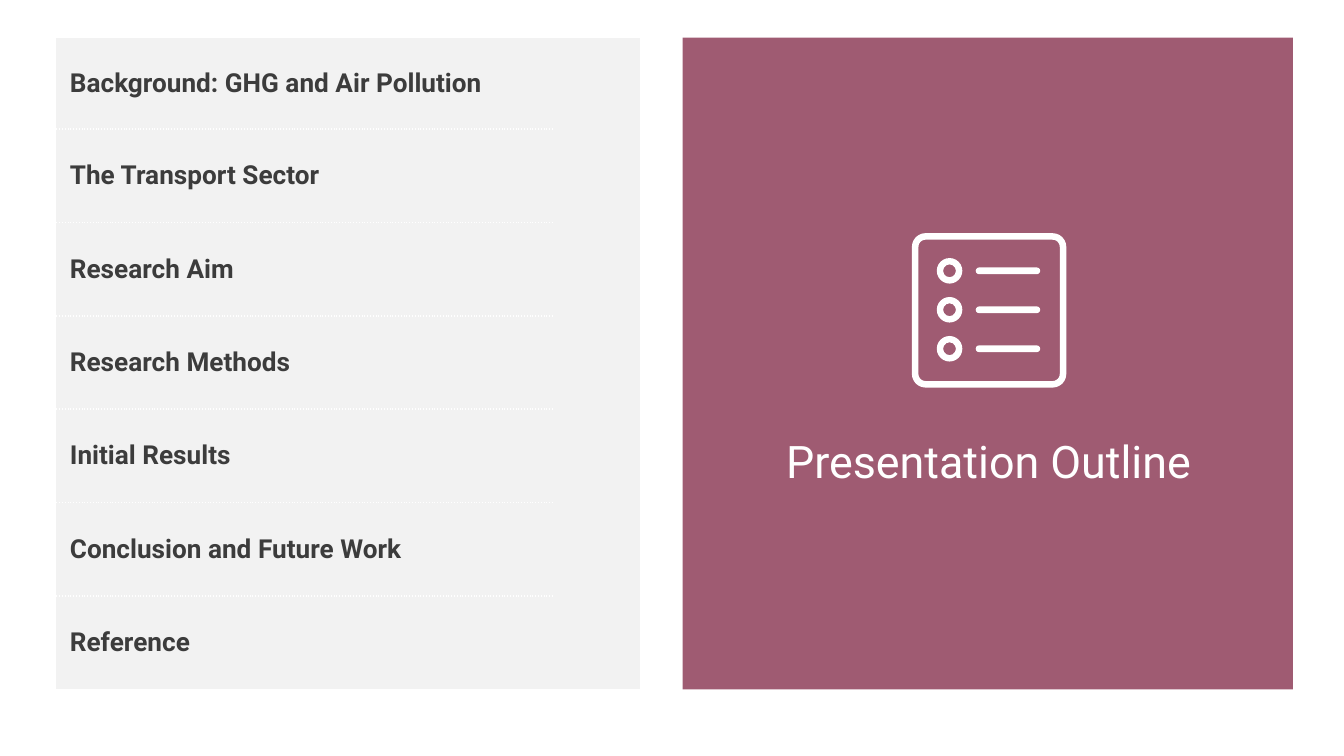
from dataclasses import dataclass

from lxml import etree
from pptx import Presentation
from pptx.dml.color import RGBColor
from pptx.enum.shapes import MSO_SHAPE
from pptx.enum.text import MSO_ANCHOR, MSO_AUTO_SIZE, PP_ALIGN
from pptx.oxml.ns import qn
from pptx.util import Inches, Pt

RECTANGLE = MSO_SHAPE.RECTANGLE
ROUNDED = MSO_SHAPE.ROUNDED_RECTANGLE
DONUT = MSO_SHAPE.DONUT
MIDDLE = MSO_ANCHOR.MIDDLE
FIT_TEXT = MSO_AUTO_SIZE.SHAPE_TO_FIT_TEXT
LEFT, CENTER = PP_ALIGN.LEFT, PP_ALIGN.CENTER
TITLE_ONLY = 5
NO_TABLE_STYLE = "{2D5ABB26-0587-4C30-8999-92F81FD0307C}"


@dataclass(frozen=True)
class Theme:
    font: str = "Roboto"
    accent: str = "9F5B72"
    pale: str = "F2F2F2"
    ink: str = "3C3C3C"
    white: str = "FFFFFF"
    title_size: float = 24
    topic_size: float = 14


TOPICS = [
    "Background: GHG and Air Pollution",
    "The Transport Sector",
    "Research Aim",
    "Research Methods",
    "Initial Results",
    "Conclusion and Future Work",
    "Reference",
]


def write_text(frame, text, *, font, size, color, bold=False, align=LEFT):
    para = frame.paragraphs[0]
    para.alignment = align
    span = para.add_run()
    span.text = text
    span.font.name = font
    span.font.size = Pt(size)
    span.font.bold = bold
    span.font.color.rgb = RGBColor.from_string(color)


def add_dotted_border(cell, side, color):
    line = etree.Element(qn(f"a:{side}"), w=str(Pt(1)))
    fill = etree.SubElement(line, qn("a:solidFill"))
    etree.SubElement(fill, qn("a:srgbClr"), val=color)
    etree.SubElement(line, qn("a:prstDash"), val="sysDot")
    # Borders come before the fill, the top one first
    cell._tc.get_or_add_tcPr().insert(0, line)


class OutlineSlide:
    def __init__(self, deck, theme):
        self.theme = theme
        self.page = deck.slides.add_slide(deck.slide_layouts[TITLE_ONLY])

    def shape(self, kind, left, top, width, height, fill=None, line=None,
              line_width=1, rounding=None):
        shape = self.page.shapes.add_shape(
            kind, Inches(left), Inches(top), Inches(width), Inches(height))
        shape.shadow.inherit = False
        if fill:
            shape.fill.solid()
            shape.fill.fore_color.rgb = RGBColor.from_string(fill)
        else:
            shape.fill.background()
        if line:
            shape.line.color.rgb = RGBColor.from_string(line)
            shape.line.width = Pt(line_width)
        else:
            shape.line.fill.background()
        if rounding is not None:
            shape.adjustments[0] = rounding

    def title(self, text, left, top, width, height):
        box = self.page.shapes.title
        box.left, box.top = Inches(left), Inches(top)
        box.width, box.height = Inches(width), Inches(height)
        frame = box.text_frame
        frame.margin_left = frame.margin_right = 0
        frame.margin_top = frame.margin_bottom = 0
        frame.vertical_anchor = MIDDLE
        frame.word_wrap = True
        frame.auto_size = FIT_TEXT
        write_text(frame, text, font=self.theme.font, size=self.theme.title_size,
                   color=self.theme.white, align=CENTER)
        # Bring the title in front of the panel
        box.element.getparent().append(box.element)

    def topic_table(self, topics, left, top, widths, height, first_height):
        holder = self.page.shapes.add_table(
            len(topics), len(widths), Inches(left), Inches(top),
            Inches(sum(widths)), Inches(height))
        next(holder.element.iter(qn("a:tableStyleId"))).text = NO_TABLE_STYLE
        table = holder.table
        table.first_row = table.horz_banding = False
        for column, width in zip(table.columns, widths):
            column.width = Inches(width)
        other_height = (height - first_height) / (len(topics) - 1)
        for index, topic in enumerate(topics):
            row = table.rows[index]
            row.height = Inches(other_height if index else first_height)
            for cell in row.cells:
                cell.fill.solid()
                cell.fill.fore_color.rgb = RGBColor.from_string(self.theme.pale)
            cell = table.cell(index, 0)
            cell.vertical_anchor = MIDDLE
            cell.margin_left = cell.margin_right = Inches(0.1)
            cell.margin_top = cell.margin_bottom = Inches(0.1)
            write_text(cell.text_frame, topic, font=self.theme.font, bold=True,
                       size=self.theme.topic_size, color=self.theme.ink)
            add_dotted_border(cell, "lnB", self.theme.white)
            if index:
                add_dotted_border(cell, "lnT", self.theme.white)

    def list_icon(self, left, top):
        white = self.theme.white
        # Frame
        self.shape(ROUNDED, left + 0.03, top + 0.03, 1.1, 1.1, line=white,
                   line_width=3.5, rounding=0.07)
        # Rows: a ring and a bar each
        for row in range(3):
            row_top = top + 0.19 + row * 0.29
            self.shape(DONUT, left + 0.19, row_top, 0.19, 0.19, fill=white,
                       rounding=0.25)
            self.shape(ROUNDED, left + 0.48, row_top + 0.07, 0.48, 0.05,
                       fill=white, rounding=0.5)


def main():
    theme = Theme()
    deck = Presentation()
    # Widescreen, 16 to 9
    deck.slide_width, deck.slide_height = Inches(10), Inches(10 * 9 / 16)
    slide = OutlineSlide(deck, theme)

    # Right panel
    slide.shape(RECTANGLE, 5.08, 0.28, 4.54, 4.85, fill=theme.accent)

    # Left list of topics
    slide.topic_table(TOPICS, 0.42, 0.28, [3.7, 0.64], 4.85, first_height=0.68)

    # Icon and title on the panel
    slide.list_icon(6.78, 1.73)
    slide.title("Presentation Outline", 5.52, 3.23, 3.67, 0.4)

    deck.save("out.pptx")


if __name__ == "__main__":
    main()
